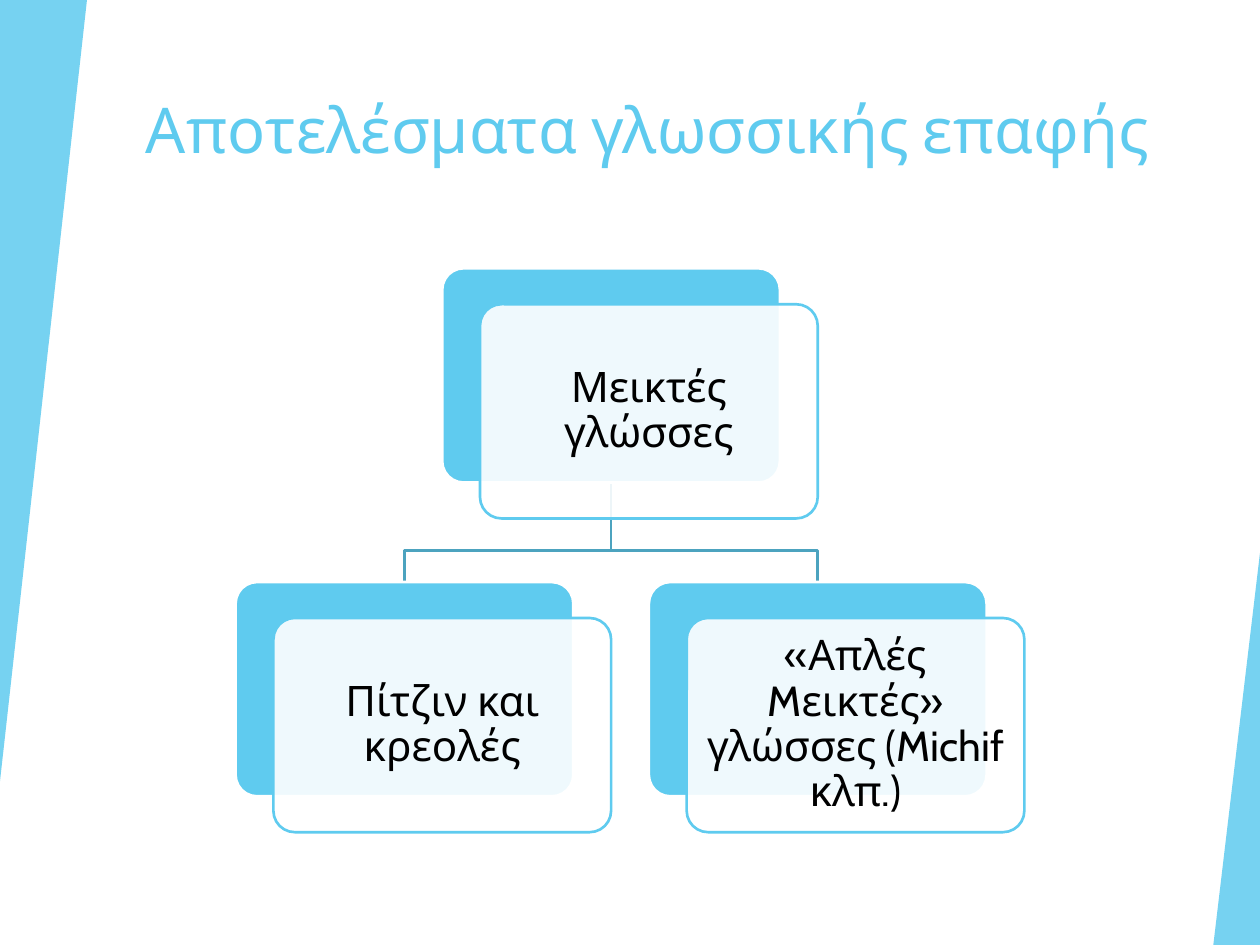
from dataclasses import dataclass

from lxml import etree
from pptx import Presentation
from pptx.dml.color import RGBColor
from pptx.enum.shapes import MSO_SHAPE
from pptx.enum.text import MSO_ANCHOR, PP_ALIGN
from pptx.oxml.ns import qn
from pptx.util import Inches, Pt

TRIANGLE = MSO_SHAPE.ISOSCELES_TRIANGLE
ROUNDED = MSO_SHAPE.ROUNDED_RECTANGLE
CENTER, LEFT = PP_ALIGN.CENTER, PP_ALIGN.LEFT
MIDDLE, TOP = MSO_ANCHOR.MIDDLE, MSO_ANCHOR.TOP

PAGE_W, PAGE_H = 10, 7.5
GRID_LEFT, GRID_TOP = 1.87, 2.13
COLUMN, ROW = 1.64, 2.49
CARD_W, CARD_H = 2.68, 1.7
PANEL_DX, PANEL_DY = 0.3, 0.285
BEND_GAP = 0.25
CORNER = 0.1


@dataclass(frozen=True)
class Theme:
    font: str = "Cabin"
    accent: str = "5FCBEF"
    link: str = "4CA3BF"
    white: str = "FFFFFF"
    black: str = "000000"
    title_size: float = 36
    card_size: float = 24
    line_width: float = 1.5


@dataclass(frozen=True)
class Box:
    left: float
    top: float
    width: float
    height: float

    @property
    def center(self) -> float:
        return self.left + self.width / 2

    @property
    def bottom(self) -> float:
        return self.top + self.height

    def emu(self) -> list:
        return [Inches(v) for v in (self.left, self.top, self.width, self.height)]


@dataclass(frozen=True)
class Card:
    text: str
    column: int
    row: int

    @property
    def box(self) -> Box:
        return Box(GRID_LEFT + self.column * COLUMN, GRID_TOP + self.row * ROW,
                   CARD_W, CARD_H)


@dataclass(frozen=True)
class Wedge:
    box: Box
    apex: float
    rotation: int = 0


THEME = Theme()
PARENT = Card("Μεικτές γλώσσες", 1, 0)
CHILDREN = [
    Card("Πίτζιν και κρεολές", 0, 1),
    Card("«Απλές Mεικτές» γλώσσες (Michif κλπ.)", 2, 1),
]
WEDGES = [
    Wedge(Box(0, 0, 0.69, 6.2), apex=1, rotation=180),
    Wedge(Box(PAGE_W - 0.37, PAGE_H - 3.11, 0.37, 3.11), apex=1),
]


def paint(shape, fill: str, line: str | None = None, opacity: int = 100) -> None:
    shape.shadow.inherit = False
    shape.fill.solid()
    shape.fill.fore_color.rgb = RGBColor.from_string(fill)
    if opacity < 100:
        color = shape.fill._xPr.find(qn("a:solidFill"))[0]
        etree.SubElement(color, qn("a:alpha"), val=str(opacity * 1000))
    if line:
        shape.line.color.rgb = RGBColor.from_string(line)
        shape.line.width = Pt(THEME.line_width)
    else:
        shape.line.fill.background()


def write(shape, text: str, size: float, color: str, align, anchor,
          inset_x: float, inset_y: float, spacing: float = 1.0) -> None:
    frame = shape.text_frame
    frame_format = {
        "word_wrap": True, "vertical_anchor": anchor,
        "margin_left": Inches(inset_x), "margin_right": Inches(inset_x),
        "margin_top": Inches(inset_y), "margin_bottom": Inches(inset_y),
    }
    for name, value in frame_format.items():
        setattr(frame, name, value)
    para = frame.paragraphs[0]
    para.alignment = align
    para.line_spacing = spacing
    span = para.add_run()
    span.text = text
    for name, value in {"name": THEME.font, "size": Pt(size)}.items():
        setattr(span.font, name, value)
    span.font.color.rgb = RGBColor.from_string(color)


def draw_wedge(page, wedge: Wedge) -> None:
    shape = page.shapes.add_shape(TRIANGLE, *wedge.box.emu())
    shape.adjustments[0] = wedge.apex
    shape.rotation = wedge.rotation
    paint(shape, THEME.accent, opacity=85)


def draw_link(page, parent: Box, child: Box) -> None:
    """Draw an elbow from the parent's bottom centre to the child's top centre."""
    bend = child.top - BEND_GAP
    points = [(parent.center, bend), (child.center, bend), (child.center, child.top)]
    builder = page.shapes.build_freeform(
        Inches(parent.center), Inches(parent.bottom))
    builder.add_line_segments([(Inches(x), Inches(y)) for x, y in points], close=False)
    shape = builder.convert_to_shape()
    paint(shape, THEME.white, THEME.link)
    shape.fill.background()


def draw_card(page, card: Card) -> None:
    """Draw a solid back plate and the offset, see-through panel with the text."""
    back = card.box
    front = Box(back.left + PANEL_DX, back.top + PANEL_DY, CARD_W, CARD_H)
    plate, panel = (page.shapes.add_shape(ROUNDED, *box.emu()) for box in (back, front))
    for shape in (plate, panel):
        shape.adjustments[0] = CORNER
    paint(plate, THEME.accent, THEME.white)
    paint(panel, THEME.white, THEME.accent, opacity=90)
    write(panel, card.text, THEME.card_size, THEME.black, CENTER, MIDDLE,
          inset_x=0.1, inset_y=0.1, spacing=0.9)


def main() -> None:
    deck = Presentation()
    deck.slide_width, deck.slide_height = Inches(PAGE_W), Inches(PAGE_H)
    page = deck.slides.add_slide(deck.slide_layouts[6])

    title = page.shapes.add_textbox(*Box(1.06, 0.67, 8.36, 1.2).emu())
    write(title, "Αποτελέσματα γλωσσικής επαφής", THEME.title_size, THEME.accent,
          LEFT, TOP, inset_x=0.1, inset_y=0.05)
    for wedge in WEDGES:
        draw_wedge(page, wedge)
    for child in reversed(CHILDREN):
        draw_link(page, PARENT.box, child.box)
    for card in [PARENT, *CHILDREN]:
        draw_card(page, card)
    deck.save("out.pptx")


if __name__ == "__main__":
    main()
